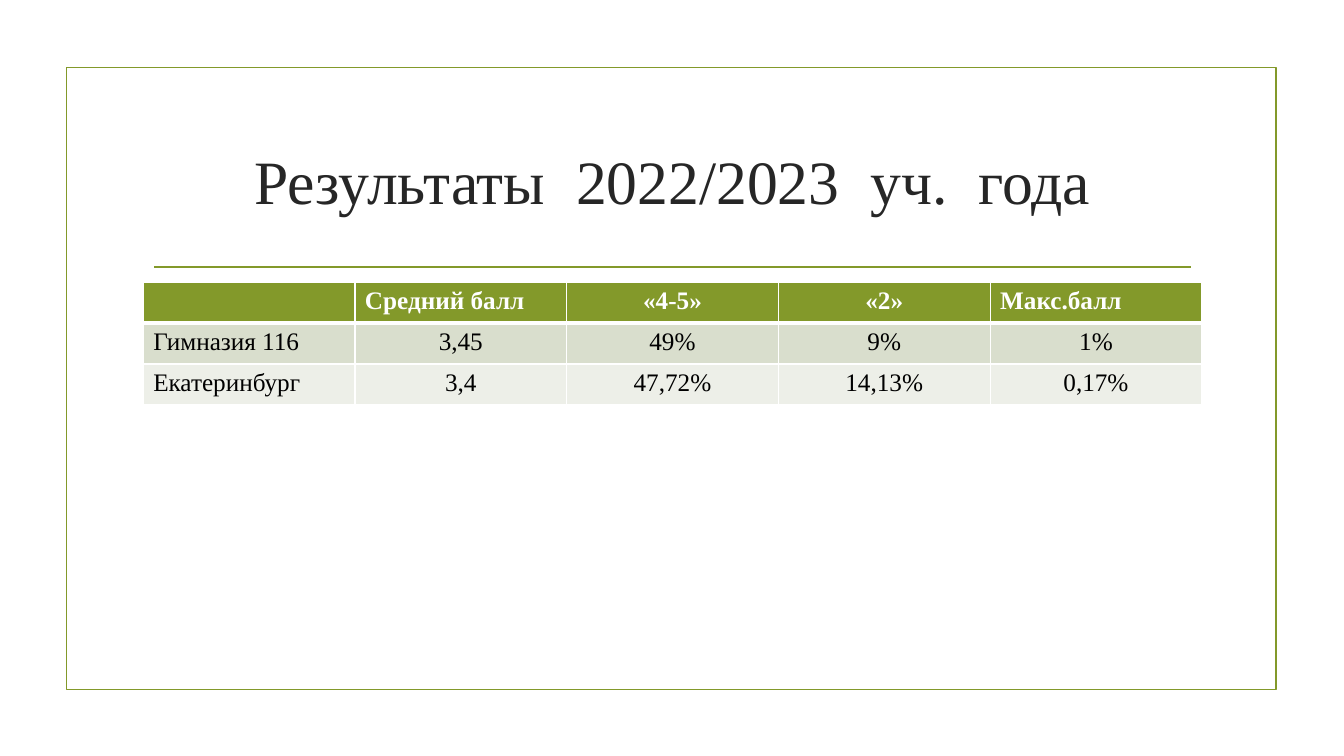
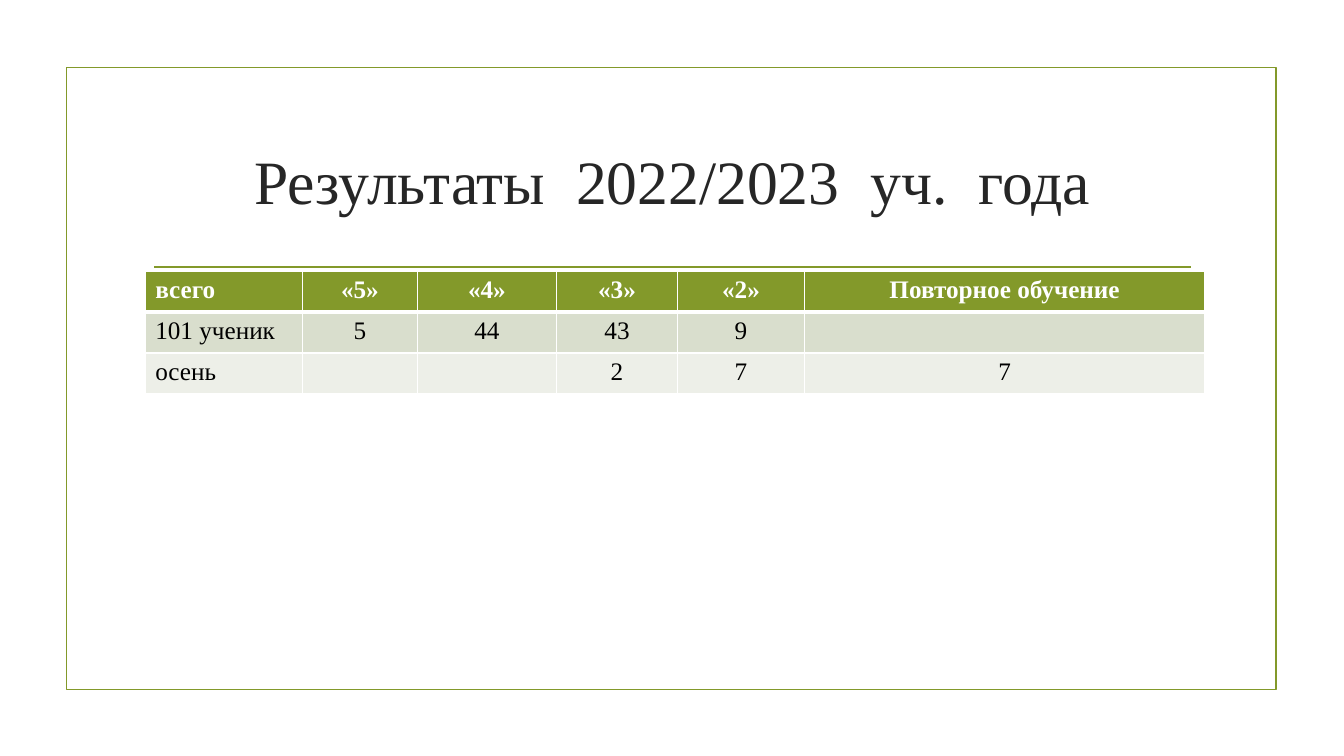
from dataclasses import dataclass

from lxml.etree import SubElement
from pptx import Presentation
from pptx.dml.color import RGBColor
from pptx.enum.shapes import MSO_CONNECTOR, MSO_SHAPE
from pptx.enum.text import MSO_ANCHOR, MSO_AUTO_SIZE, PP_ALIGN
from pptx.oxml.ns import qn
from pptx.presentation import Presentation as Deck
from pptx.slide import Slide
from pptx.table import _Cell as Cell
from pptx.text.text import _Paragraph as Paragraph
from pptx.util import Inches, Pt

GREEN = RGBColor(0x83, 0x99, 0x2A)
BAND_DARK = RGBColor(0xD9, 0xDE, 0xCD)
BAND_LIGHT = RGBColor(0xED, 0xEF, 0xE8)
TITLE_COLOR = RGBColor(0x26, 0x26, 0x26)
BLACK = RGBColor(0x00, 0x00, 0x00)
WHITE = RGBColor(0xFF, 0xFF, 0xFF)

FONT = "Times New Roman"
TITLE = "Результаты  2022/2023  уч.  года"
LINE_WIDTH = Pt(1.25)
ROW_HEIGHT = 0.406
THIN, THICK = Pt(1), Pt(3)


@dataclass(frozen=True)
class ResultTable:
    left: float
    top: float
    column_widths: tuple[float, ...]
    rows: tuple[tuple[str, ...], ...]
    left_headers: tuple[int, ...]


RESULT_TABLES = (
    ResultTable(
        left=1.42,
        top=2.8,
        column_widths=(2.1,) * 5,
        rows=(
            ("", "Средний балл", "«4-5»", "«2»", "Макс.балл"),
            ("Гимназия 116", "3,45", "49%", "9%", "1%"),
            ("Екатеринбург", "3,4", "47,72%", "14,13%", "0,17%"),
        ),
        left_headers=(0, 1, 4),
    ),
    ResultTable(
        left=1.44,
        top=2.69,
        column_widths=(1.56, 1.14, 1.38, 1.2, 1.26, 3.97),
        rows=(
            ("всего", "«5»", "«4»", "«3»", "«2»", "Повторное обучение"),
            ("101 ученик", "5", "44", "43", "9", ""),
            ("осень", "", "", "2", "7", "7"),
        ),
        left_headers=(0,),
    ),
)


def format_paragraph(paragraph: Paragraph, size: int, color: RGBColor,
                     alignment: PP_ALIGN, bold: bool = False) -> None:
    paragraph.alignment = alignment
    for run in paragraph.runs:
        run.font.name = FONT
        run.font.size = Pt(size)
        run.font.bold = bold
        run.font.color.rgb = color


def add_frame(slide: Slide) -> None:
    # Border around the slide content
    frame = slide.shapes.add_shape(
        MSO_SHAPE.RECTANGLE, Inches(0.66), Inches(0.67), Inches(12), Inches(6.17))
    frame.shadow.inherit = False
    frame.fill.background()
    frame.line.color.rgb = GREEN
    frame.line.width = LINE_WIDTH

    # Rule under the title
    rule = slide.shapes.add_connector(
        MSO_CONNECTOR.STRAIGHT, Inches(1.53), Inches(2.65), Inches(11.81), Inches(2.65))
    rule.line.color.rgb = GREEN
    rule.line.width = LINE_WIDTH
    SubElement(rule._element.spPr, qn("a:effectLst"))


def set_title(slide: Slide) -> None:
    title = slide.shapes.title
    title.left, title.top = Inches(1.42), Inches(1.07)
    title.width, title.height = Inches(10.5), Inches(1.43)
    text_frame = title.text_frame
    text_frame.text = TITLE
    text_frame.word_wrap = True
    text_frame.auto_size = MSO_AUTO_SIZE.NONE
    text_frame.vertical_anchor = MSO_ANCHOR.MIDDLE
    format_paragraph(text_frame.paragraphs[0], 44, TITLE_COLOR, PP_ALIGN.CENTER)


def set_borders(cell: Cell, top: Pt, bottom: Pt) -> None:
    properties = cell._tc.get_or_add_tcPr()
    for side, width in (("L", THIN), ("R", THIN), ("T", top), ("B", bottom)):
        border = SubElement(properties, qn(f"a:ln{side}"), w=str(int(width)))
        fill = SubElement(border, qn("a:solidFill"))
        SubElement(fill, qn("a:srgbClr"), val=str(WHITE))


def add_result_table(slide: Slide, result: ResultTable) -> None:
    row_count, column_count = len(result.rows), len(result.column_widths)
    table = slide.shapes.add_table(
        row_count, column_count, Inches(result.left), Inches(result.top),
        Inches(sum(result.column_widths)), Inches(ROW_HEIGHT * row_count)).table
    for column, width in zip(table.columns, result.column_widths):
        column.width = Inches(width)

    for row_index, row in enumerate(result.rows):
        is_header = row_index == 0
        band = GREEN if is_header else (BAND_LIGHT, BAND_DARK)[row_index % 2]
        for column_index, text in enumerate(row):
            cell = table.cell(row_index, column_index)
            # The thick line separates the header from the data
            set_borders(cell, top=THICK if row_index == 1 else THIN,
                        bottom=THICK if is_header else THIN)
            cell.fill.solid()
            cell.fill.fore_color.rgb = band
            if not text:
                continue
            cell.text_frame.text = text
            is_left = column_index == 0 or (is_header and column_index in result.left_headers)
            format_paragraph(
                cell.text_frame.paragraphs[0], 18, WHITE if is_header else BLACK,
                PP_ALIGN.LEFT if is_left else PP_ALIGN.CENTER, bold=is_header)


def add_result_slide(presentation: Deck, result: ResultTable) -> None:
    title_only = presentation.slide_layouts.get_by_name("Title Only")
    slide = presentation.slides.add_slide(title_only)
    add_frame(slide)
    set_title(slide)
    add_result_table(slide, result)


def main() -> None:
    presentation = Presentation()
    presentation.slide_width = Inches(13.33)
    presentation.slide_height = Inches(7.5)
    for result in RESULT_TABLES:
        add_result_slide(presentation, result)
    presentation.save("out.pptx")


if __name__ == "__main__":
    main()
